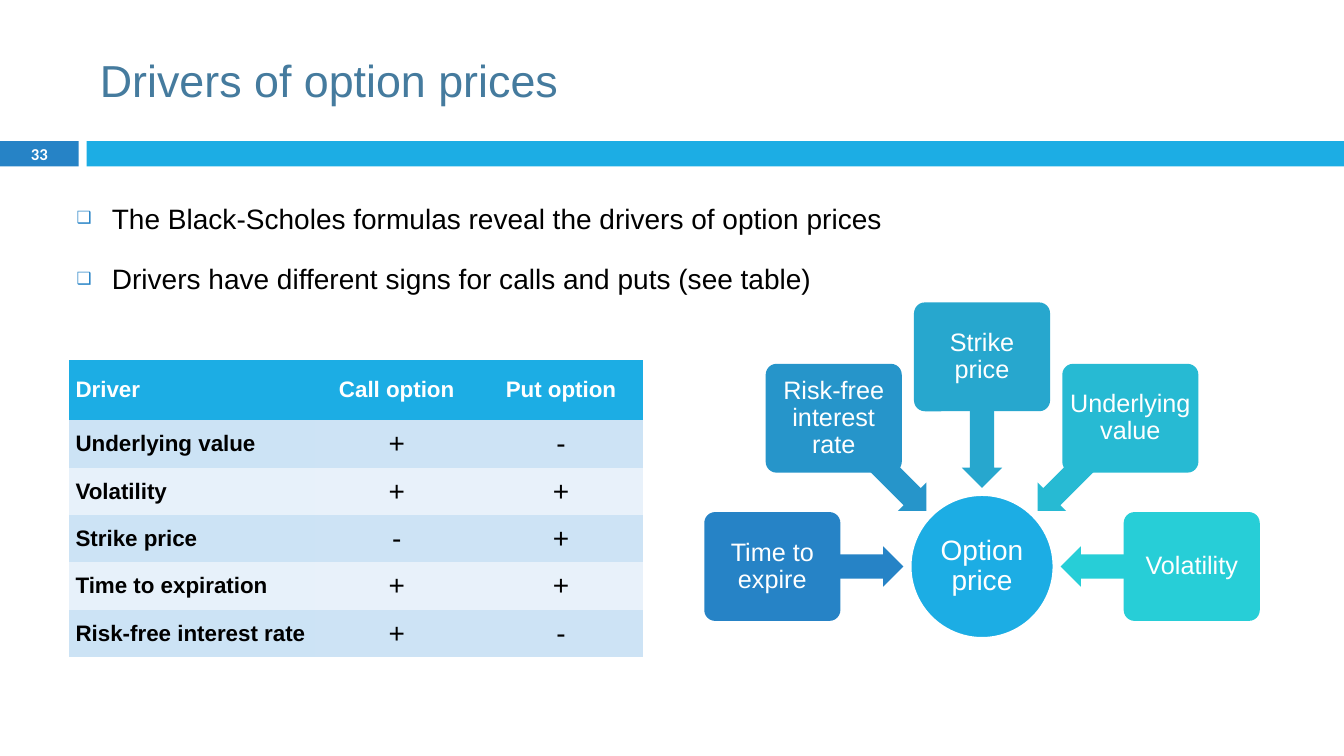
from math import cos, radians, sin

from lxml.etree import SubElement
from pptx import Presentation
from pptx.dml.color import RGBColor
from pptx.enum.shapes import MSO_SHAPE
from pptx.enum.text import MSO_ANCHOR, PP_ALIGN
from pptx.oxml.ns import qn
from pptx.util import Inches, Pt

COLORS = {
    "title": "457B9E", "text": "000000", "white": "FFFFFF",
    "accent": "1CADE4", "blue": "2683C6",
    "risk_free": "2695CA", "strike": "27A7CE",
    "underlying": "27BAD3", "volatility": "27CED7",
    "odd_label": "CCE3F5", "odd_sign": "CDE3F5",
    "even_label": "E7F1FA", "even_sign": "E8F1FA",
}


def add_filled(kind, left, top, width, height, color):
    shape = slide.shapes.add_shape(
        kind, Inches(left), Inches(top), Inches(width), Inches(height))
    shape.shadow.inherit = False
    shape.fill.solid()
    shape.fill.fore_color.rgb = RGBColor.from_string(COLORS[color])
    shape.line.fill.background()
    return shape


def write(frame, text, size, color, align=PP_ALIGN.CENTER, bold=False, font="Arial", inset=None):
    frame.text = text
    frame.word_wrap = True
    if inset is not None:
        frame.margin_left = frame.margin_right = Inches(inset)
        frame.margin_top = frame.margin_bottom = Inches(inset)
    for para in frame.paragraphs:
        para.alignment = align
        for span in para.runs:
            span.font.size = Pt(size)
            span.font.name = font
            span.font.bold = bold
            span.font.color.rgb = RGBColor.from_string(COLORS[color])


deck = Presentation()
deck.slide_width, deck.slide_height = Inches(13.33), Inches(7.5)
page = deck.slides.add_slide(deck.slide_layouts[1])
slide = page

number_bar = add_filled(MSO_SHAPE.RECTANGLE, 0, 1.4, 0.78, 0.25, "blue")
write(number_bar.text_frame, "33", 11.9, "white", bold=True, font="Calibri", inset=0)
number_bar.text_frame.vertical_anchor = MSO_ANCHOR.MIDDLE
add_filled(MSO_SHAPE.RECTANGLE, 0.86, 1.4, 12.47, 0.25, "accent")

title = page.shapes.title
title.left, title.top = Inches(0.89), Inches(0.25)
title.width, title.height = Inches(11.89), Inches(1.08)
write(title.text_frame, "Drivers of option prices", 32, "title", PP_ALIGN.LEFT)
title.text_frame.vertical_anchor = MSO_ANCHOR.MIDDLE

body = page.placeholders[1]
body.left, body.top = Inches(0.66), Inches(1.78)
body.width, body.height = Inches(11.6), Inches(5.08)
points = [
    "The Black-Scholes formulas reveal the drivers of option prices",
    "Drivers have different signs for calls and puts (see table)",
]
write(body.text_frame, "\n".join(points), 20, "text", PP_ALIGN.LEFT)
for para in body.text_frame.paragraphs:
    para.line_spacing = 1.5
    para.space_before = Pt(7)
    properties = para._p.get_or_add_pPr()
    properties.set("marL", str(Inches(0.35)))
    properties.set("indent", str(-Inches(0.35)))
    bullet_color = SubElement(properties, qn("a:buClr"))
    SubElement(bullet_color, qn("a:srgbClr"), val=COLORS["blue"])
    SubElement(properties, qn("a:buSzPct"), val="60000")
    SubElement(properties, qn("a:buFont"), typeface="Arial")
    SubElement(properties, qn("a:buChar"), char="❑")

rows = [
    ("Driver", "Call option", "Put option"),
    ("Underlying value", "+", "-"),
    ("Volatility", "+", "+"),
    ("Strike price", "-", "+"),
    ("Time to expiration", "+", "+"),
    ("Risk-free interest rate", "+", "-"),
]
table_frame = page.shapes.add_table(
    len(rows), 3, Inches(0.68), Inches(3.57), Inches(5.7), Inches(2.95))
table = table_frame.table
table._tbl.tblPr.find(qn("a:tableStyleId")).text = "{2D5ABB26-0587-4C30-8999-92F81FD0307C}"
for column, width in zip(table.columns, (2.44, 1.63, 1.63)):
    column.width = Inches(width)
for row_index, row in enumerate(rows):
    header = row_index == 0
    table.rows[row_index].height = Inches(0.6 if header else 0.47)
    for column_index, text in enumerate(row):
        label = column_index == 0
        cell = table.cell(row_index, column_index)
        write(cell.text_frame, text, 16 if header or label else 20,
              "white" if header else "text",
              PP_ALIGN.LEFT if label else PP_ALIGN.CENTER, header or label)
        cell.vertical_anchor = MSO_ANCHOR.MIDDLE
        cell.margin_left = cell.margin_right = Inches(0.07)
        cell.margin_top = cell.margin_bottom = 0
        band = ("odd" if row_index % 2 else "even") + ("_label" if label else "_sign")
        cell.fill.solid()
        cell.fill.fore_color.rgb = RGBColor.from_string(COLORS["accent" if header else band])

center_x, center_y = 9.74, 5.62
hub_size = 1.42
box_width, box_height, box_radius = 1.35, 1.08, 2.08
arrow_width, arrow_height, arrow_radius = 1.3, 0.4, 1.43

hub = add_filled(MSO_SHAPE.OVAL, center_x - hub_size / 2, center_y - hub_size / 2,
                 hub_size, hub_size, "accent")
hub.line.color.rgb = RGBColor.from_string(COLORS["white"])
hub.line.width = Pt(1.5)
write(hub.text_frame, "Option price", 20, "white", inset=0.01)
hub.text_frame.paragraphs[0].line_spacing = 0.9
hub.text_frame.vertical_anchor = MSO_ANCHOR.MIDDLE

drivers = [
    ("Time to expire", "blue"),
    ("Risk-free interest rate", "risk_free"),
    ("Strike price", "strike"),
    ("Underlying value", "underlying"),
    ("Volatility", "volatility"),
]
for index, (text, color) in enumerate(drivers):
    angle = 180 + 45 * index
    across, down = cos(radians(angle)), sin(radians(angle))
    arrow = add_filled(
        MSO_SHAPE.LEFT_ARROW,
        center_x + arrow_radius * across - arrow_width / 2,
        center_y + arrow_radius * down - arrow_height / 2,
        arrow_width, arrow_height, color)
    arrow.adjustments[0], arrow.adjustments[1] = 0.6, 0.5
    arrow.rotation = angle % 360
    box = add_filled(
        MSO_SHAPE.ROUNDED_RECTANGLE,
        center_x + box_radius * across - box_width / 2,
        center_y + box_radius * down - box_height / 2,
        box_width, box_height, color)
    box.adjustments[0] = 0.1
    write(box.text_frame, text, 18, "white", inset=0.04)
    box.text_frame.paragraphs[0].line_spacing = 0.9
    box.text_frame.vertical_anchor = MSO_ANCHOR.MIDDLE

deck.save("out.pptx")
